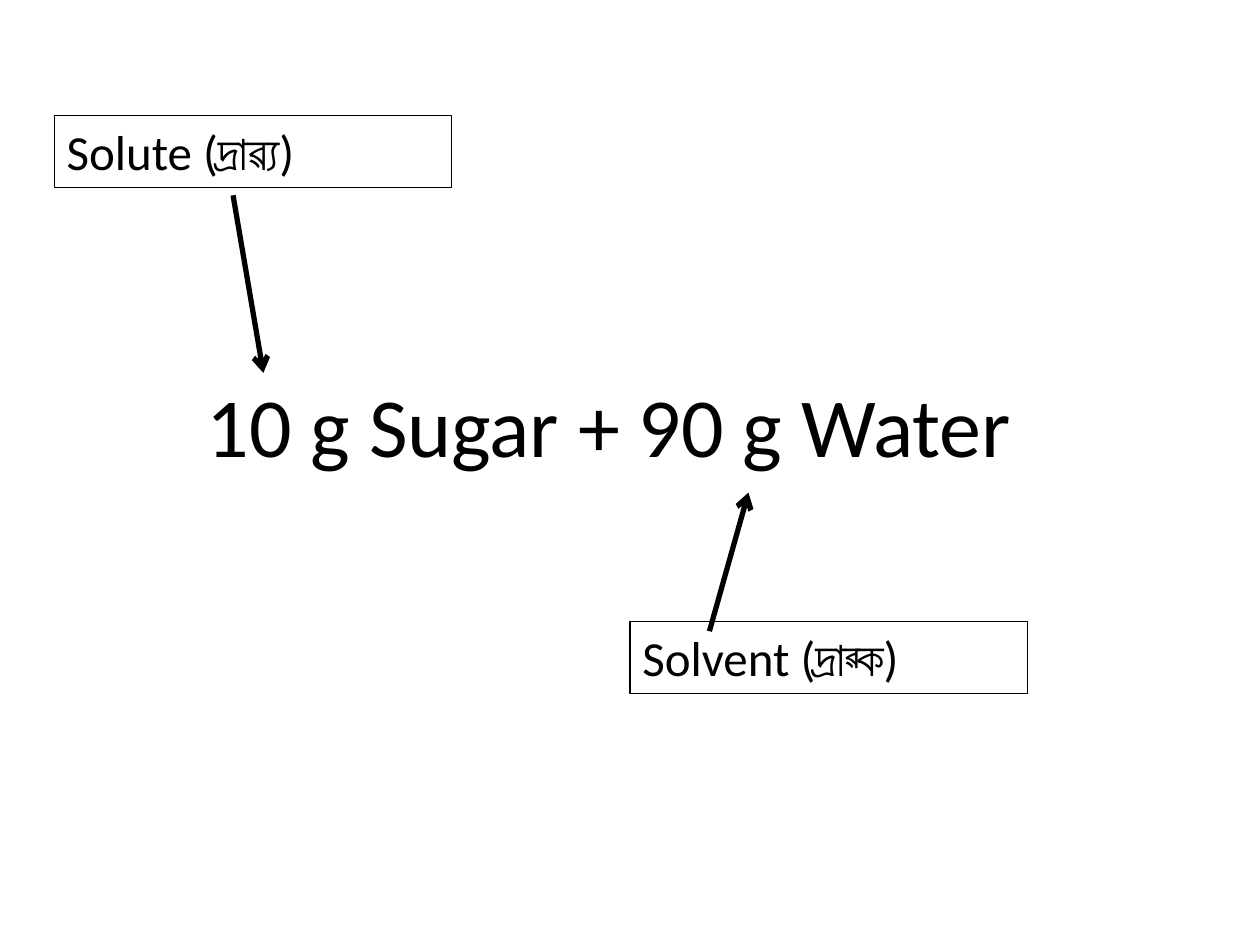
from lxml import etree
from pptx import Presentation
from pptx.dml.color import RGBColor
from pptx.enum.shapes import MSO_CONNECTOR as Connector
from pptx.enum.text import MSO_AUTO_SIZE as AutoSize
from pptx.oxml.ns import qn
from pptx.util import Pt


def color(hex_code):
    return RGBColor.from_string(hex_code)


def add_text(slide, text, size, left, top, width, height):
    box = slide.shapes.add_textbox(Pt(left), Pt(top), Pt(width), Pt(height))
    frame = box.text_frame
    frame.word_wrap = True
    frame.auto_size = AutoSize.SHAPE_TO_FIT_TEXT
    para = frame.paragraphs[0]
    para.text = text
    para.font.name = "Calibri"
    para.font.size = Pt(size)
    para.font.color.rgb = color("000000")
    return box


deck = Presentation()
deck.slide_width, deck.slide_height = Pt(720), Pt(540)
slide = deck.slides.add_slide(deck.slide_layouts[6])

add_text(slide, "10 g Sugar + 90 g Water", 48, 111, 210, 675, 65.5)

# Arrows from each label to its part of the mixture
for start_x, start_y, end_x, end_y in [
    (133.2, 111.6, 150.5, 213.1),
    (405.4, 360.7, 427.7, 281.5),
]:
    arrow = slide.shapes.add_connector(
        Connector.STRAIGHT, Pt(start_x), Pt(start_y), Pt(end_x), Pt(end_y)
    )
    arrow.line.color.rgb = color("000000")
    arrow.line.width = Pt(3)
    properties = arrow.line._get_or_add_ln()
    etree.SubElement(properties, qn("a:tailEnd"), type="arrow")
    etree.SubElement(properties.getparent(), qn("a:effectLst"))

for text, left, top in [
    ("Solute (দ্রাৱ্য)", 31, 66),
    ("Solvent (দ্রাৱ্ক)", 360, 355),
]:
    label = add_text(slide, text, 28, left, top, 227, 41.2)
    label.line.color.rgb = color("000000")
    label.line.width = Pt(0.75)

deck.save("out.pptx")
